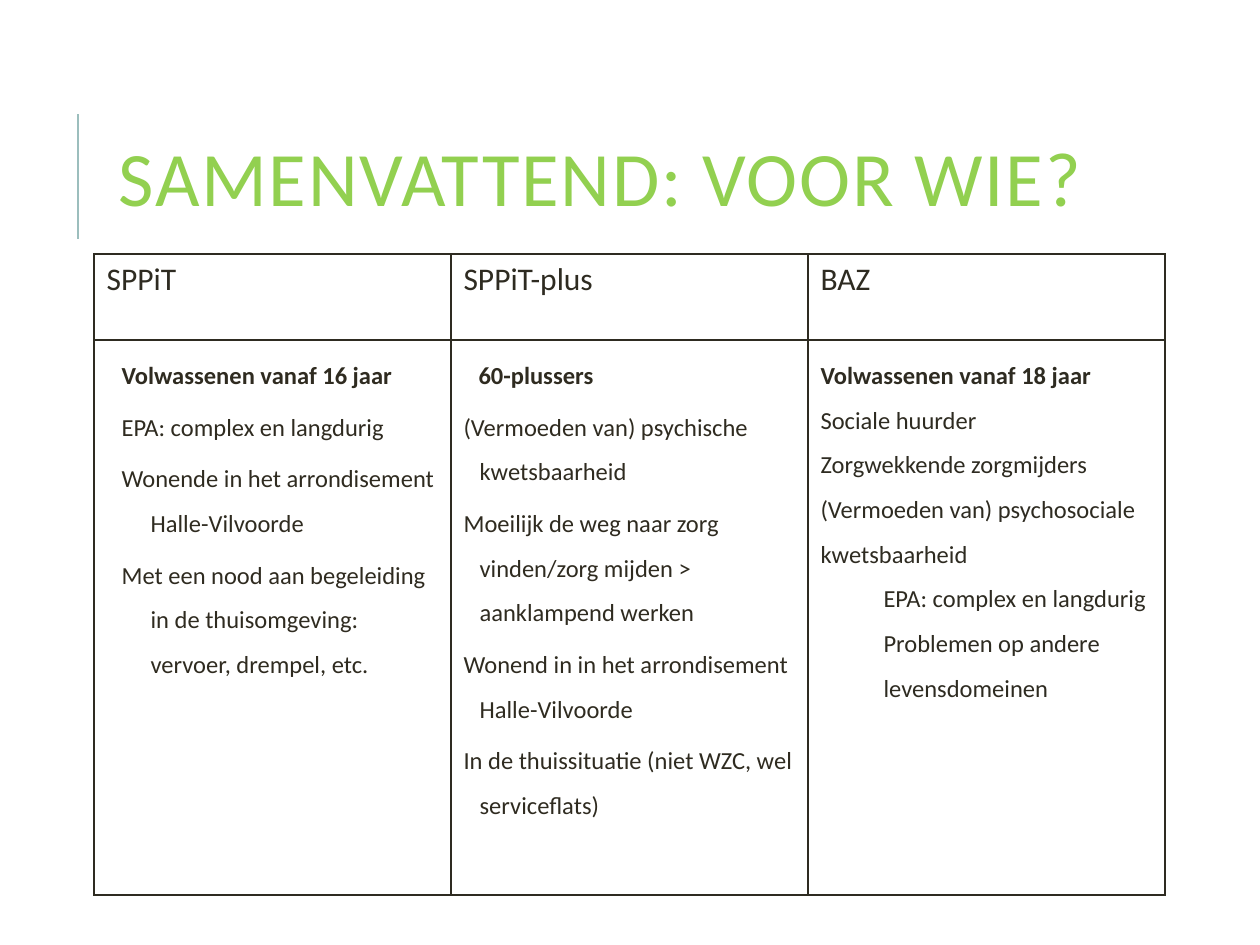
"""Build the summary slide that compares three target groups in a table."""
import pptx
import pptx.dml.color
import pptx.enum.shapes
import pptx.enum.text
import pptx.util
import lxml.etree
import pptx.oxml.ns

PX = 914400 // 126
FONT = "Calibri"
INK = "2E2B21"
BODY_INK = "2F2B20"
GREEN = "92D050"
TEAL = "9CBEBD"

TITLE = "SAMENVATTEND: VOOR WIE?"
TITLE_BOX = (106, 81, 1004, 207)
ACCENT_LINE = (78, 239, 78, 114)
TABLE_LEFT, TABLE_TOP = 94, 254
COLUMN_WIDTH = 357
ROW_HEIGHTS = (86, 555)

DEEP = {"left": 44, "first": -29, "before": 4}
HANGING = {"left": 16, "first": -16, "before": 4}
FLUSH = {"left": 0, "first": 0, "before": 0}
NESTED = {"left": 63, "first": 0, "before": 0}

COLUMNS = [
    ("SPPiT", BODY_INK, [
        ("Volwassenen vanaf 16 jaar", DEEP),
        ("EPA: complex en langdurig", DEEP),
        ("Wonende in het arrondisement Halle-Vilvoorde", DEEP),
        ("Met een nood aan begeleiding in de thuisomgeving: vervoer, drempel, etc.", DEEP),
    ]),
    ("SPPiT-plus", BODY_INK, [
        ("60-plussers", DEEP),
        ("(Vermoeden van) psychische kwetsbaarheid", HANGING),
        ("Moeilijk de weg naar zorg vinden/zorg mijden > aanklampend werken", HANGING),
        ("Wonend in in het arrondisement Halle-Vilvoorde", HANGING),
        ("In de thuissituatie (niet WZC, wel serviceflats)", HANGING),
    ]),
    ("BAZ", INK, [
        ("Volwassenen vanaf 18 jaar", FLUSH),
        ("Sociale huurder", FLUSH),
        ("Zorgwekkende zorgmijders", FLUSH),
        ("(Vermoeden van) psychosociale kwetsbaarheid", FLUSH),
        ("EPA: complex en langdurig", NESTED),
        ("Problemen op andere levensdomeinen", NESTED),
    ]),
]


def px(*lengths):
    return [length * PX for length in lengths]


def rgb(color):
    return pptx.dml.color.RGBColor.from_string(color)


def add_run(paragraph, text, size, color, bold=False):
    run = paragraph.add_run()
    run.text = text
    run.font.name = FONT
    run.font.size = pptx.util.Pt(size)
    run.font.color.rgb = rgb(color)
    run.font.bold = bold
    return run


def add_child(parent, tag, **attributes):
    return lxml.etree.SubElement(parent, pptx.oxml.ns.qn(tag), **attributes)


def format_cell(cell):
    properties = cell._tc.get_or_add_tcPr()
    for side in ("a:lnL", "a:lnR", "a:lnT", "a:lnB"):
        border = add_child(properties, side, w=str(pptx.util.Pt(1)))
        add_child(add_child(border, "a:solidFill"), "a:srgbClr", val=INK)
    cell.fill.background()


def add_title(slide):
    title = slide.shapes.title
    title.left, title.top, title.width, title.height = px(*TITLE_BOX)
    frame = title.text_frame
    frame.auto_size = pptx.enum.text.MSO_AUTO_SIZE.NONE
    frame.vertical_anchor = pptx.enum.text.MSO_ANCHOR.MIDDLE
    paragraph = frame.paragraphs[0]
    paragraph.alignment = pptx.enum.text.PP_ALIGN.LEFT
    paragraph.line_spacing = 0.8
    run = add_run(paragraph, TITLE, 44, GREEN)
    run.font._element.set("spc", "100")


def add_accent_line(slide):
    line = slide.shapes.add_connector(
        pptx.enum.shapes.MSO_CONNECTOR.STRAIGHT, *px(*ACCENT_LINE))
    line.line.color.rgb = rgb(TEAL)
    line.line.width = pptx.util.Pt(1.5)
    add_child(line._element.spPr, "a:effectLst")


def fill_list(frame, items, color):
    for index, (text, style) in enumerate(items):
        paragraph = frame.add_paragraph() if index else frame.paragraphs[0]
        paragraph.level = 1 if style is NESTED else 0
        paragraph.line_spacing = 1.5
        paragraph.space_before = pptx.util.Pt(style["before"])
        properties = paragraph._p.get_or_add_pPr()
        properties.set("marL", str(style["left"] * PX))
        properties.set("indent", str(style["first"] * PX))
        add_run(paragraph, text, 14, color, bold=index == 0)


def add_groups_table(slide):
    width = COLUMN_WIDTH * len(COLUMNS)
    table = slide.shapes.add_table(
        len(ROW_HEIGHTS), len(COLUMNS),
        *px(TABLE_LEFT, TABLE_TOP, width, sum(ROW_HEIGHTS))).table
    table.first_row = table.horz_banding = False
    for row, height in zip(table.rows, ROW_HEIGHTS):
        row.height = height * PX
    for index, (heading, color, items) in enumerate(COLUMNS):
        table.columns[index].width = COLUMN_WIDTH * PX
        header, body = table.cell(0, index), table.cell(1, index)
        add_run(header.text_frame.paragraphs[0], heading, 18, INK)
        fill_list(body.text_frame, items, color)
        format_cell(header)
        format_cell(body)


def main():
    presentation = pptx.Presentation()
    presentation.slide_width = pptx.util.Inches(10)
    presentation.slide_height = pptx.util.Inches(7.5)
    slide = presentation.slides.add_slide(presentation.slide_layouts[5])
    add_accent_line(slide)
    add_title(slide)
    add_groups_table(slide)
    presentation.save("out.pptx")


if __name__ == "__main__":
    main()
